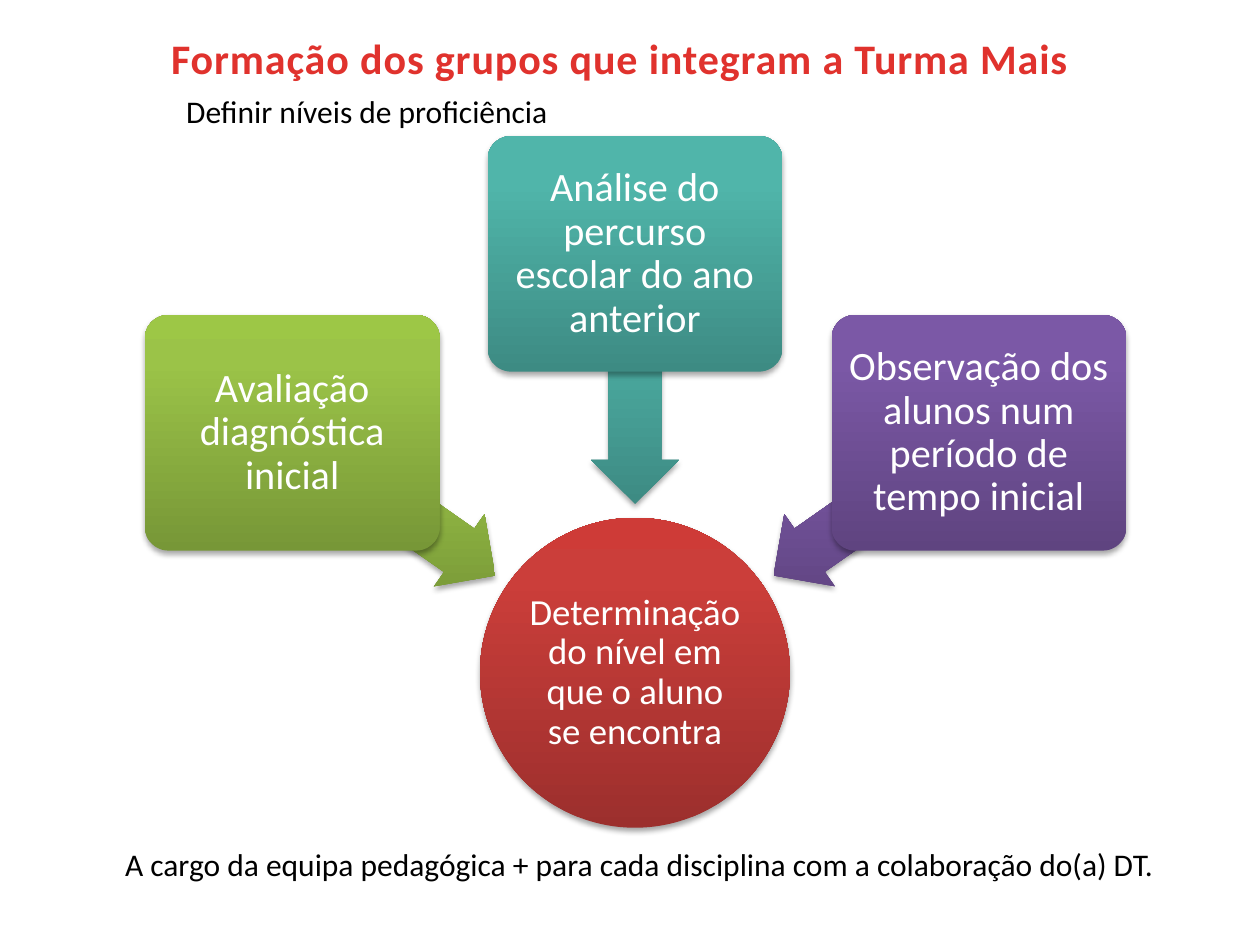
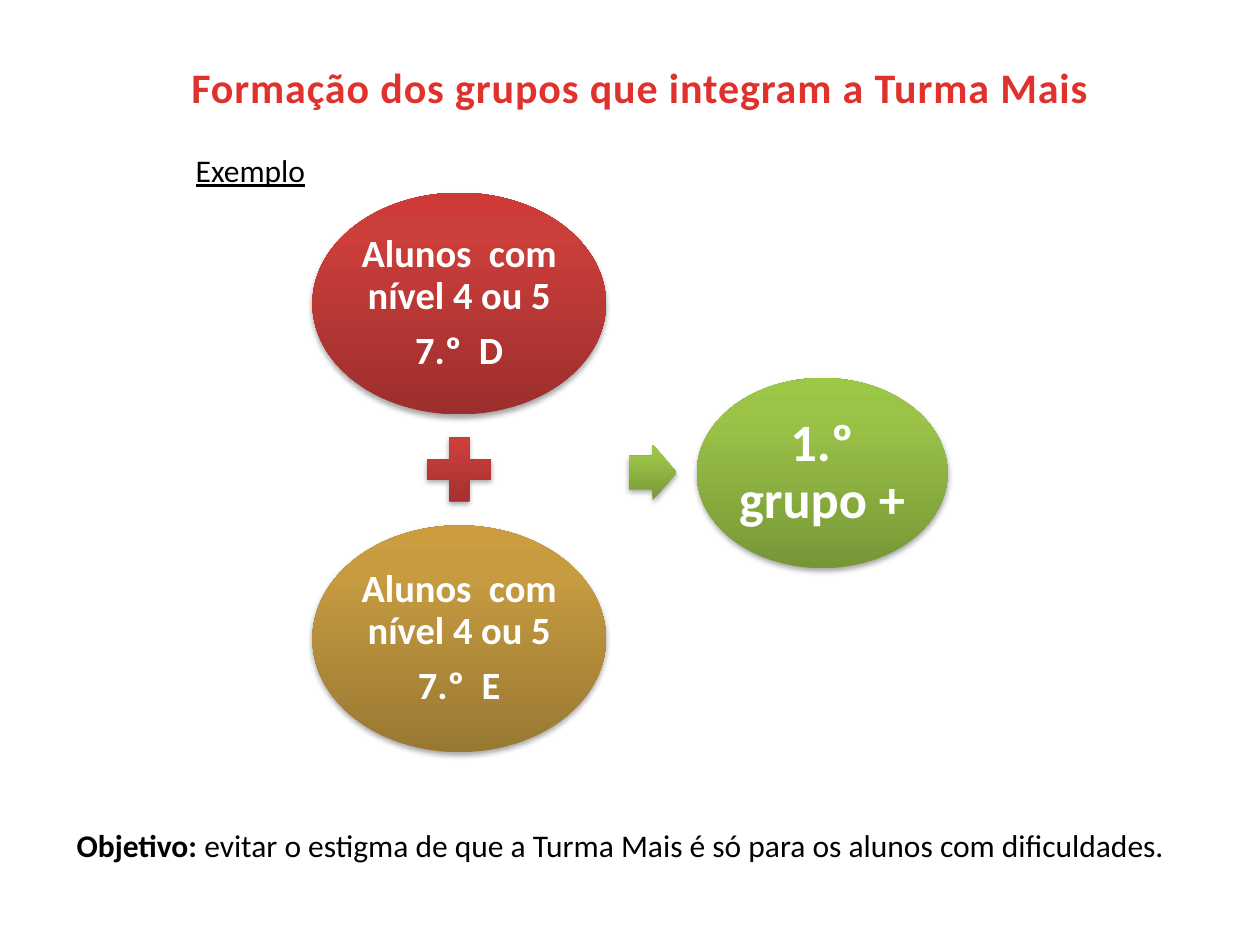
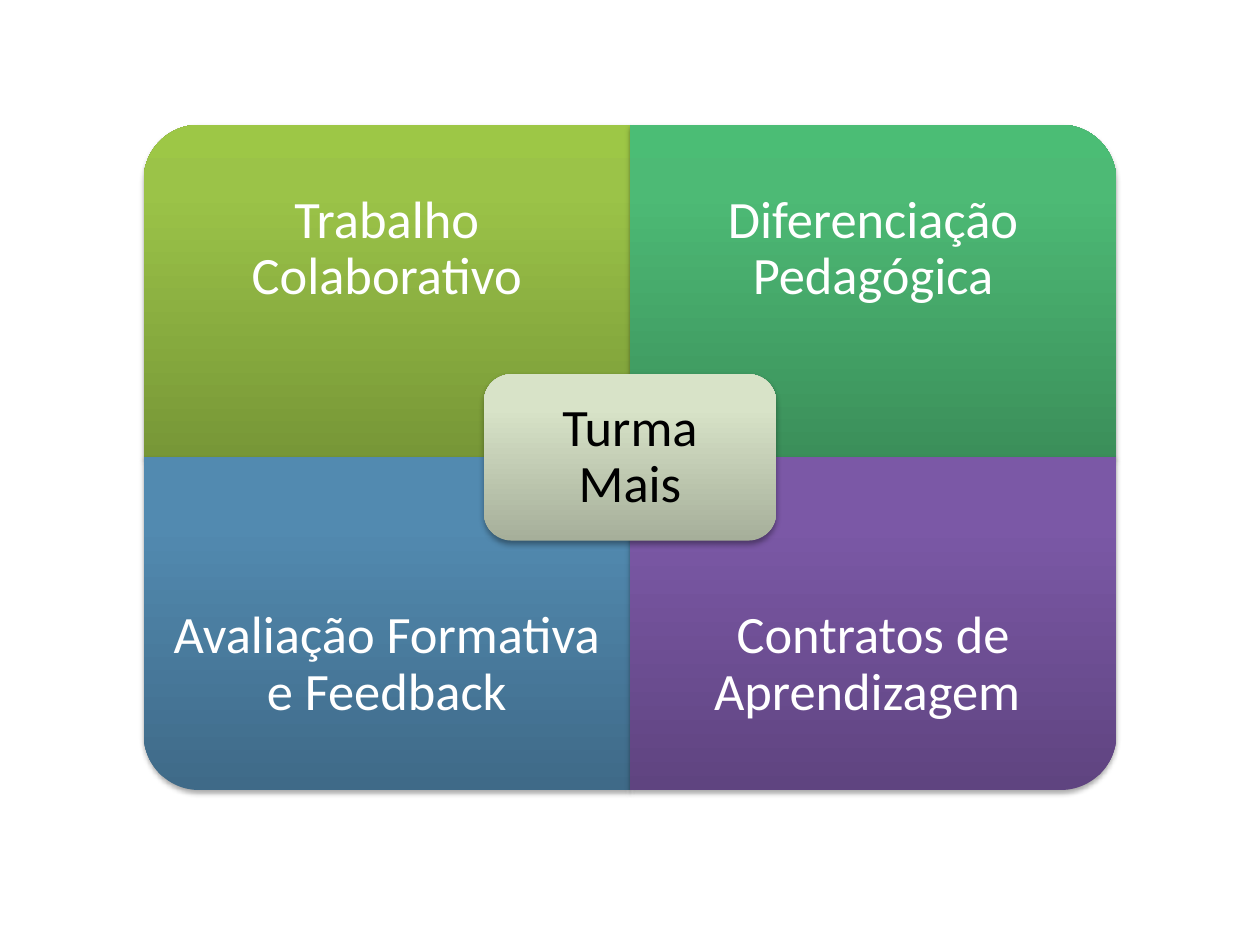
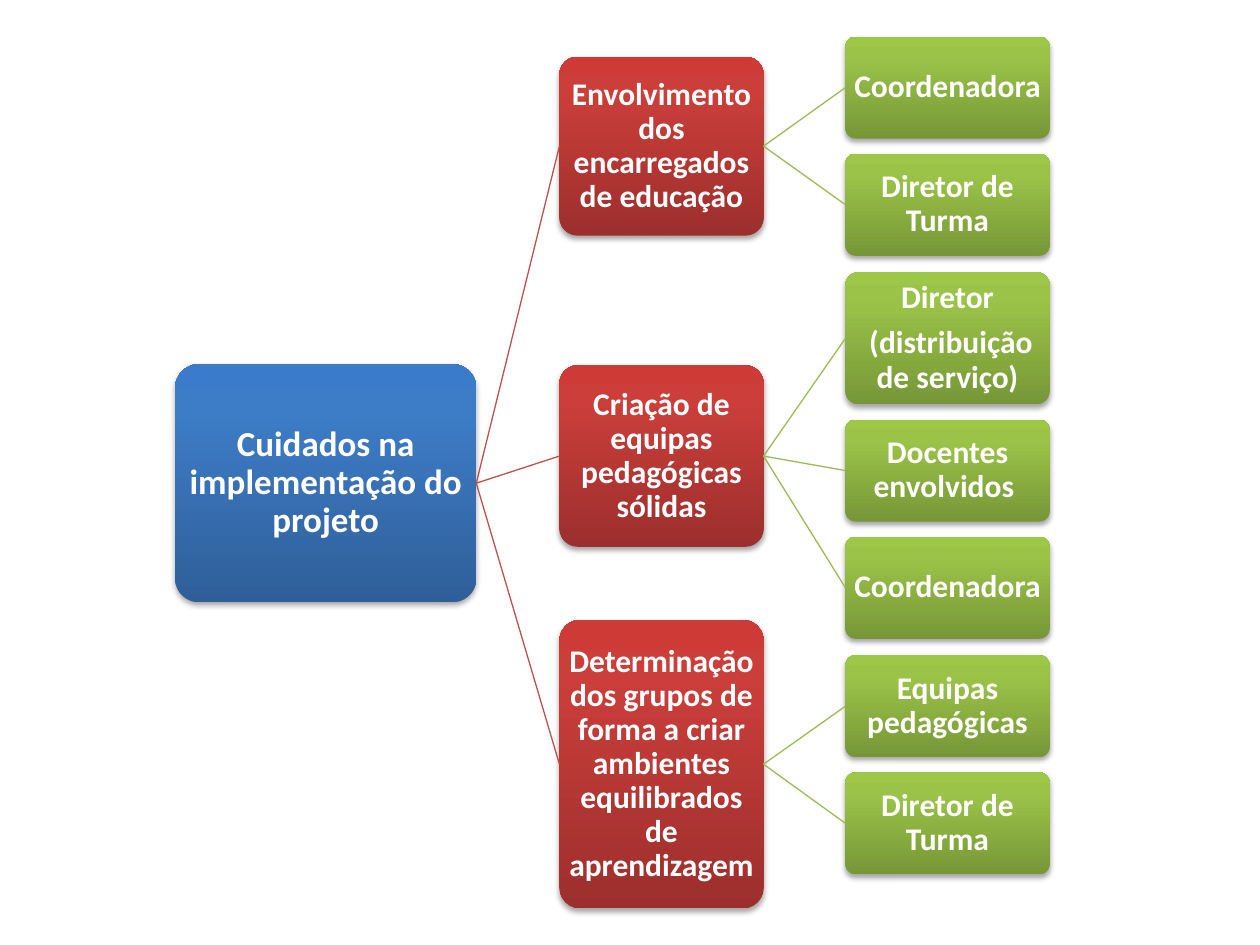
from copy import deepcopy
from dataclasses import dataclass
from typing import NamedTuple

from lxml.etree import SubElement
from pptx import Presentation
from pptx.dml.color import RGBColor
from pptx.enum.shapes import MSO_CONNECTOR, MSO_SHAPE as Preset
from pptx.enum.text import MSO_ANCHOR as Anchor, MSO_AUTO_SIZE, PP_ALIGN as Align
from pptx.oxml.ns import qn
from pptx.util import Emu, Pt

PX = 9144  # 100 px to the inch
TOP, LEFT, BOTTOM, RIGHT = range(4)  # connection sites of a rectangle


class Box(NamedTuple):
    left: int
    top: int
    width: int
    height: int

    def emu(self) -> list[Emu]:
        return [px(length) for length in self]

    @property
    def middle(self) -> float:
        return self.top + self.height / 2


class Shade(NamedTuple):
    """Gradient colours from the bottom (dark) to the top."""
    dark: str
    main: str
    light: str


@dataclass(frozen=True)
class Theme:
    font: str = "Calibri"
    title_color: str = "E0322D"
    white: str = "FFFFFF"
    black: str = "000000"
    red_line: str = "C0504D"
    green_line: str = "9BBB59"
    red: Shade = Shade("9C2F2D", "CB3E3A", "CE3B37")
    lime: Shade = Shade("779737", "9BC348", "9DC746")
    teal: Shade = Shade("3D8B83", "50B5AA", "4EB8AC")
    purple: Shade = Shade("5F4480", "7B58A6", "7C57A8")
    gold: Shade = Shade("997832", "C79C41", "CB9D3F")
    green: Shade = Shade("3B8F5A", "4DBA75", "4BBD75")
    steel: Shade = Shade("3F6A88", "528AB0", "518BB3")
    blue: Shade = Shade("2F5F99", "3D7CC7", "3A7CCB")
    sage: Shade = Shade("A6AF9A", "D8E3C8", "D9E4C8")
    shade_stops: tuple = (0, 0.8, 1)
    title_size: int = 24
    caption_size: int = 18
    circle_size: int = 21
    source_size: int = 23
    group_size: int = 22
    large_size: int = 30
    root_size: int = 20
    node_size: int = 18
    round_corner: float = 0.1
    arrow_form: tuple = (0.6, 0.5)


THEME = Theme()


@dataclass(frozen=True)
class Label:
    paragraphs: tuple[str, ...]
    size: int
    inset: int
    bold: bool = False
    color: str = THEME.white


@dataclass(frozen=True)
class Source:
    """A box on slide 1 with its arrow to the circle."""
    text: str
    box: Box
    arrow: Box
    turn: int
    shade: Shade


@dataclass(frozen=True)
class Quadrant:
    text: str
    column: int
    row: int
    turn: int
    shade: Shade


@dataclass(frozen=True)
class Branch:
    text: str
    height: int
    leaves: tuple[tuple[str, ...], ...]


def px(length: float) -> Emu:
    return Emu(round(length * PX))


def style_paragraph(paragraph, size: int, color: str, bold: bool = False,
                    align=Align.CENTER) -> None:
    paragraph.alignment = align
    font = paragraph.font
    font.name, font.size, font.bold = THEME.font, Pt(size), bold
    font.color.rgb = RGBColor.from_string(color)


def add_shadow(shape) -> None:
    shape.shadow.inherit = False
    effects = shape._element.spPr.find(qn("a:effectLst"))
    shadow = SubElement(effects, qn("a:outerShdw"), blurRad="40000", dist="23000",
                        dir="5400000", rotWithShape="0")
    color = SubElement(shadow, qn("a:srgbClr"), val=THEME.black)
    SubElement(color, qn("a:alpha"), val="35000")


def shade_shape(shape, shade: Shade) -> None:
    """Fill with an upright gradient that stays upright when the shape turns."""
    shape.fill.gradient()
    shape.fill.gradient_angle = 90
    gradient = shape._element.spPr.find(qn("a:gradFill"))
    gradient.set("rotWithShape", "0")
    stop_list = gradient.find(qn("a:gsLst"))
    stop_list.append(deepcopy(stop_list[-1]))
    for stop, color, position in zip(shape.fill.gradient_stops, shade, THEME.shade_stops):
        stop.color.rgb = RGBColor.from_string(color)
        stop.position = position


def write_label(shape, label: Label) -> None:
    frame = shape.text_frame
    frame.word_wrap = True
    frame.vertical_anchor = Anchor.MIDDLE
    frame.margin_left = frame.margin_right = px(label.inset)
    frame.margin_top = frame.margin_bottom = px(label.inset)
    frame.text = "\n".join(label.paragraphs)
    for paragraph in frame.paragraphs:
        style_paragraph(paragraph, label.size, label.color, label.bold)
        paragraph.line_spacing = 0.9
        paragraph.space_after = Pt(0.35 * label.size)


def add_shaded(slide, preset, box: Box, shade: Shade, label: Label | None = None,
               turn: int = 0, adjustments: tuple = ()):
    shape = slide.shapes.add_shape(preset, *box.emu())
    shape.rotation = turn
    for index, value in enumerate(adjustments):
        shape.adjustments[index] = value
    shade_shape(shape, shade)
    shape.line.fill.background()
    add_shadow(shape)
    if label:
        write_label(shape, label)
    return shape


def add_node(slide, box: Box, shade: Shade, label: Label):
    return add_shaded(slide, Preset.ROUNDED_RECTANGLE, box, shade, label,
                      adjustments=(THEME.round_corner,))


def add_caption(slide, box: Box, text: str, align=Align.LEFT, lead: str = ""):
    """Add a plain line of text, opened by a bold lead if there is one."""
    frame = slide.shapes.add_textbox(*box.emu()).text_frame
    frame.word_wrap = True
    paragraph = frame.paragraphs[0]
    style_paragraph(paragraph, THEME.caption_size, THEME.black, align=align)
    if lead:
        run = paragraph.add_run()
        run.text, run.font.bold = lead, True
    paragraph.add_run().text = text
    return paragraph


def add_titled_slide(presentation, box: Box):
    slide = presentation.slides.add_slide(presentation.slide_layouts[5])
    title = slide.shapes.title
    title.left, title.top, title.width, title.height = box.emu()
    frame = title.text_frame
    frame.text = "Formação dos grupos que integram a Turma Mais"
    frame.word_wrap = True
    frame.auto_size = MSO_AUTO_SIZE.NONE
    frame.vertical_anchor = Anchor.TOP
    paragraph = frame.paragraphs[0]
    style_paragraph(paragraph, THEME.title_size, THEME.title_color, bold=True)
    paragraph.font._rPr.set("spc", "50")
    return slide


def add_blank_slide(presentation):
    return presentation.slides.add_slide(presentation.slide_layouts[6])


def join(slide, parent, child, color: str) -> None:
    """Link the right side of the parent to the left side of the child."""
    connector = slide.shapes.add_connector(MSO_CONNECTOR.STRAIGHT, 0, 0, 0, 0)
    connector.begin_connect(parent, RIGHT)
    connector.end_connect(child, LEFT)
    connector.line.color.rgb = RGBColor.from_string(color)
    connector.line.width = Pt(0.75)
    SubElement(connector._element.spPr, qn("a:effectLst"))


def build_levels(presentation) -> None:
    slide = add_titled_slide(presentation, Box(67, 21, 850, 50))
    add_shaded(slide, Preset.OVAL, Box(381, 411, 246, 246), THEME.red,
               Label(("Determinação do nível em que o aluno se encontra",),
                     THEME.circle_size, 1))
    sources = (
        Source("Avaliação diagnóstica inicial", Box(115, 250, 234, 187),
               Box(213, 365, 198, 70), 215, THEME.lime),
        Source("Análise do percurso escolar do ano anterior", Box(387, 108, 234, 187),
               Box(405, 266, 198, 70), 270, THEME.teal),
        Source("Observação dos alunos num período de tempo inicial",
               Box(660, 250, 234, 187), Box(596, 365, 198, 70), 325, THEME.purple),
    )
    for source in sources:
        add_shaded(slide, Preset.LEFT_ARROW, source.arrow, source.shade,
                   turn=source.turn, adjustments=THEME.arrow_form)
        add_node(slide, source.box, source.shade,
                 Label((source.text,), THEME.source_size, 5))
    add_caption(slide, Box(43, 666, 929, 40),
                "A cargo da equipa pedagógica + para cada disciplina "
                "com a colaboração do(a) DT.", Align.CENTER)
    add_caption(slide, Box(138, 68, 677, 40), "Definir níveis de proficiência")


def build_example(presentation) -> None:
    slide = add_titled_slide(presentation, Box(67, 44, 882, 50))
    for group, box, shade in (("7.º  D", Box(248, 153, 233, 176), THEME.red),
                              ("7.º  E", Box(248, 417, 233, 180), THEME.gold)):
        add_shaded(slide, Preset.OVAL, box, shade,
                   Label(("Alunos  com nível 4 ou 5", group), THEME.group_size, 3, bold=True))
    add_shaded(slide, Preset.MATH_PLUS, Box(330, 338, 69, 69), THEME.red)
    add_shaded(slide, Preset.RIGHT_ARROW, Box(499, 353, 38, 44), THEME.lime,
               adjustments=THEME.arrow_form)
    add_shaded(slide, Preset.OVAL, Box(553, 300, 199, 151), THEME.lime,
               Label(("1.º grupo +",), THEME.large_size, 4, bold=True))
    heading = add_caption(slide, Box(138, 115, 114, 40), "Exemplo", Align.RIGHT)
    heading.font.underline = True
    add_caption(slide, Box(51, 651, 906, 40),
                " evitar o estigma de que a Turma Mais é só para os alunos com dificuldades.",
                lead="Objetivo:")


def build_quadrants(presentation) -> None:
    slide = add_blank_slide(presentation)
    left, top, width, height = 114, 99, 386, 264
    text_height = height * 3 // 4
    quadrants = (
        Quadrant("Trabalho Colaborativo", 0, 0, 270, THEME.lime),
        Quadrant("Diferenciação Pedagógica", 1, 0, 0, THEME.green),
        Quadrant("Avaliação Formativa e Feedback", 0, 1, 180, THEME.steel),
        Quadrant("Contratos de Aprendizagem ", 1, 1, 90, THEME.purple),
    )
    for quadrant in quadrants:
        x = left + quadrant.column * width
        y = top + quadrant.row * height
        box = Box(x, y, width, height)
        if quadrant.turn % 180:  # a quarter turn swaps the sides around the centre
            shift = (width - height) // 2
            box = Box(x + shift, y - shift, height, width)
        add_shaded(slide, Preset.ROUND_1_RECTANGLE, box, quadrant.shade, turn=quadrant.turn)
        text_top = y + quadrant.row * (height - text_height)
        text_box = slide.shapes.add_textbox(*Box(x, text_top, width, text_height).emu())
        write_label(text_box, Label((quadrant.text,), THEME.large_size, 23))
    add_shaded(slide, Preset.ROUNDED_RECTANGLE, Box(384, 297, 232, 132), THEME.sage,
               Label(("Turma Mais",), THEME.large_size, 12, color=THEME.black))


def stack_leaves(leaves: list[tuple[str, ...]], top: int, bottom: int) -> list[Box]:
    """Spread the leaves over the column with equal gaps."""
    heights = [105 if len(leaf) > 1 else 81 for leaf in leaves]
    gap = (bottom - top - sum(heights)) / (len(leaves) - 1)
    return [Box(671, round(top + sum(heights[:index]) + index * gap), 162, height)
            for index, height in enumerate(heights)]


def build_tree(presentation) -> None:
    slide = add_blank_slide(presentation)
    branches = (
        Branch("Envolvimento dos encarregados de educação", 142,
               (("Coordenadora",), ("Diretor de Turma",))),
        Branch("Criação de equipas pedagógicas sólidas", 144,
               (("Diretor", " (distribuição de serviço)"), ("Docentes envolvidos ",),
                ("Coordenadora",))),
        Branch("Determinação dos grupos de forma a criar ambientes equilibrados "
               "de aprendizagem", 229,
               (("Equipas pedagógicas",), ("Diretor de Turma",))),
    )
    root = add_node(slide, Box(139, 289, 239, 189), THEME.blue,
                    Label(("Cuidados na implementação do projeto",),
                          THEME.root_size, 1, bold=True))
    boxes = iter(stack_leaves([leaf for branch in branches for leaf in branch.leaves], 29, 694))
    for branch in branches:
        leaf_boxes = [next(boxes) for _ in branch.leaves]
        first, last = leaf_boxes[0], leaf_boxes[-1]
        middle = (first.top + last.top + last.height) / 2
        branch_box = Box(444, round(middle - branch.height / 2), 162, branch.height)
        node = add_node(slide, branch_box, THEME.red,
                        Label((branch.text,), THEME.node_size, 1, bold=True))
        join(slide, root, node, THEME.red_line)
        for leaf, leaf_box in zip(branch.leaves, leaf_boxes):
            leaf_node = add_node(slide, leaf_box, THEME.lime,
                                 Label(leaf, THEME.node_size, 1, bold=True))
            join(slide, node, leaf_node, THEME.green_line)


def main() -> None:
    presentation = Presentation()
    presentation.slide_width, presentation.slide_height = px(1000), px(750)
    for build in (build_levels, build_example, build_quadrants, build_tree):
        build(presentation)
    presentation.save("out.pptx")


if __name__ == "__main__":
    main()
